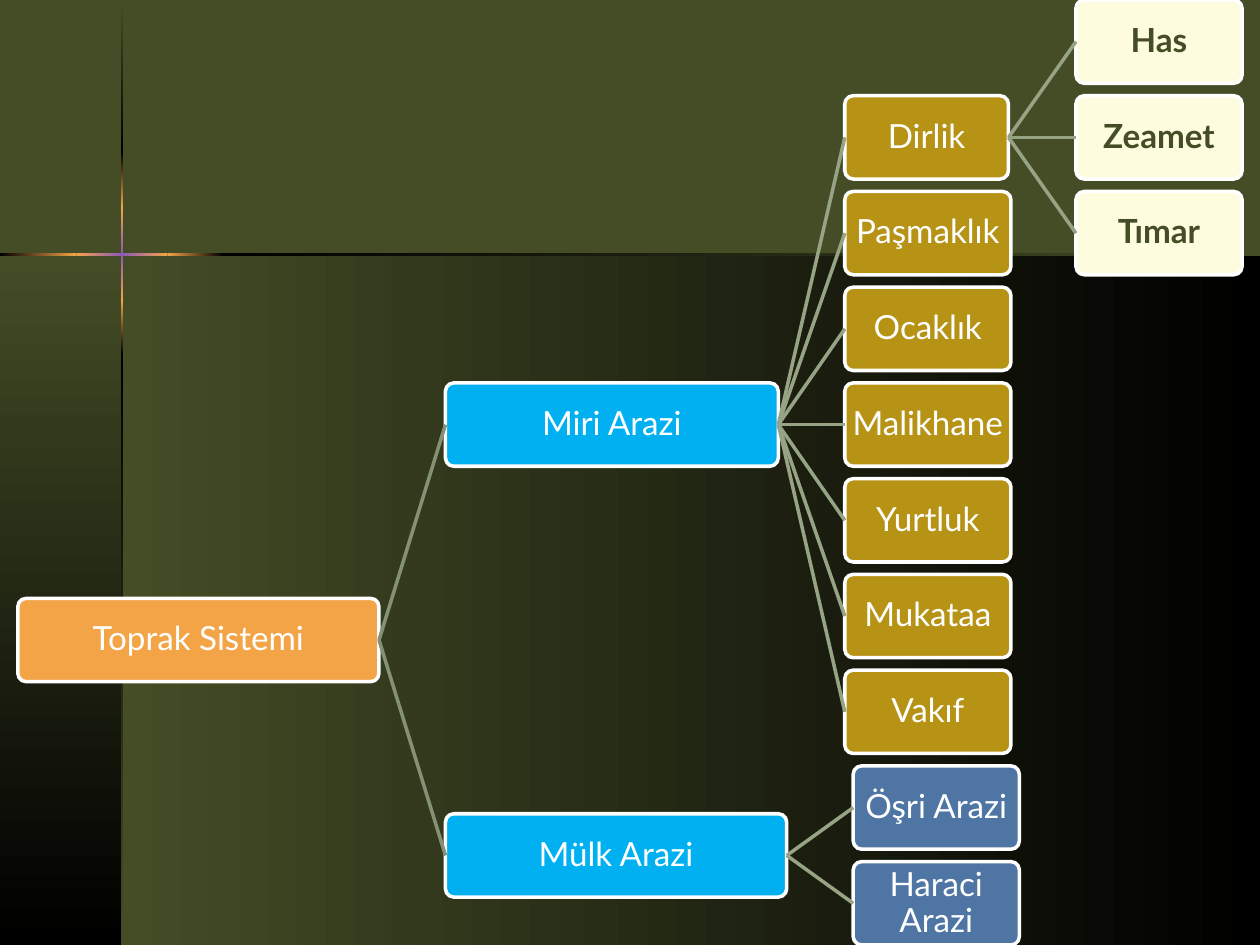
from copy import deepcopy

from lxml.etree import SubElement
from pptx import Presentation
from pptx.dml.color import RGBColor as Rgb
from pptx.enum.shapes import MSO_CONNECTOR as Link, MSO_SHAPE as Form
from pptx.enum.text import MSO_ANCHOR as Anchor, PP_ALIGN as Align
from pptx.oxml.ns import qn
from pptx.util import Cm, Pt

COLORS = {
    "olive": "444D26", "black": "000000", "white": "FFFFFF",
    "orange": "F3A447", "violet": "8E58B6", "blue": "00B0F0",
    "gold": "B79315", "cream": "FEFCDF", "steel": "4E75A3",
    "moss": "849175", "sage": "96A485",
}
WIDE, HIGH = 25.4, 19.05
PITCH, TALL = 1.93, 1.68  # row step and box height
SIDE = 3.35               # width of the small boxes
THIN = 0.05               # thickness of the glowing lines


def tint(name):
    return Rgb.from_string(COLORS[name])


def fade(slide, x, y, w, h, names, down=False):
    """Borderless rectangle with evenly spaced gradient stops."""
    rect = slide.shapes.add_shape(Form.RECTANGLE, Cm(x), Cm(y), Cm(w), Cm(h))
    rect.shadow.inherit = False
    rect.line.fill.background()
    rect.fill.gradient()
    rect.fill.gradient_angle = 270 if down else 0
    stops = rect._element.spPr.find(".//" + qn("a:gsLst"))
    for _ in names[2:]:
        stops.append(deepcopy(stops[0]))
    for i, (stop, name) in enumerate(zip(rect.fill.gradient_stops, names)):
        stop.position = i / (len(names) - 1)
        stop.color.rgb = tint(name)


def write(shape, text, size=19, color="white", bold=False, font="Lato"):
    frame = shape.text_frame
    frame.word_wrap = True
    frame.vertical_anchor = Anchor.MIDDLE
    frame.margin_left = frame.margin_right = Cm(0.08)
    frame.margin_top = frame.margin_bottom = Cm(0.08)
    para = frame.paragraphs[0]
    para.alignment = Align.CENTER
    para.line_spacing = 0.9
    run = para.add_run()
    run.text = text
    run.font.name, run.font.size, run.font.bold = font, Pt(size), bold
    run.font.color.rgb = tint(color)


def box(slide, text, x, row, w, fill, **style):
    node = slide.shapes.add_shape(
        Form.ROUNDED_RECTANGLE, Cm(x), Cm(row * PITCH), Cm(w), Cm(TALL))
    node.adjustments[0] = 0.1
    node.shadow.inherit = False
    node.fill.solid()
    node.fill.fore_color.rgb = tint(fill)
    node.line.color.rgb = tint("white")
    node.line.width = Pt(2)
    write(node, text, **style)
    return node


def join(slide, start, end, color="sage"):
    """Line from the right side of one box to the left side of another."""
    line = slide.shapes.add_connector(Link.STRAIGHT, 0, 0, 0, 0)
    line.begin_connect(start, 3)
    line.end_connect(end, 1)
    line.line.color.rgb = tint(color)
    line.line.width = Pt(2)
    SubElement(line._element.spPr, qn("a:effectLst"))


def stack(slide, root, names, x, row, fill, **style):
    """Column of small boxes, each joined to the root box."""
    nodes = []
    for i, name in enumerate(names):
        # The first gold box is slightly narrower than the others
        w = 3.3 if name == "Dirlik" else SIDE
        node = box(slide, name, x, row + i, w, fill, **style)
        join(slide, root, node)
        nodes.append(node)
    return nodes


def backdrop(slide):
    slide.background.fill.solid()
    slide.background.fill.fore_color.rgb = tint("olive")
    x, y = 2.46, 5.13
    fade(slide, x, y, WIDE - x, HIGH - y, ["olive", "black"])
    fade(slide, 0, y, x, HIGH - y, ["olive", "black"], down=True)

    # Glowing cross where the panels meet
    rise, glow = ["black", "orange"], ["orange", "violet", "orange"]
    drop = rise[::-1]
    tall = [(0.03, 3.07, ["olive", "black"]), (3.07, 4.19, rise),
            (4.19, 6.05, glow), (6.05, 7.16, drop),
            (7.16, HIGH, ["black", "olive"])]
    flat = [(0, 1.54, rise), (1.54, 3.38, glow), (3.38, 4.5, drop),
            (4.5, WIDE, ["black", "olive"])]
    for top, end, names in tall:
        fade(slide, x - THIN / 2, top, THIN, end - top, names, down=True)
    for left, end, names in flat:
        fade(slide, left, y - THIN / 2, end - left, THIN, names)


def tree(slide):
    # Root and its two branches
    root = box(slide, "Toprak Sistemi", 0.36, 6.25, 7.28, "orange")
    miri = box(slide, "Miri Arazi", 8.98, 4, 6.71, "blue")
    mulk = box(slide, "Mülk Arazi", 8.98, 8.5, 6.88, "blue")
    for branch in (miri, mulk):
        join(slide, root, branch, "moss")

    # Leaves
    lands = stack(slide, miri,
                  ["Dirlik", "Paşmaklık", "Ocaklık", "Malikhane",
                   "Yurtluk", "Mukataa", "Vakıf"], 17.03, 1, "gold")
    stack(slide, lands[0], ["Has", "Zeamet", "Tımar"], 21.69, 0, "cream",
          color="olive", bold=True)
    stack(slide, mulk, ["Öşri Arazi", "Haraci Arazi"], 17.2, 8, "steel")


def main():
    deck = Presentation()
    deck.slide_width, deck.slide_height = Cm(WIDE), Cm(HIGH)
    slide = deck.slides.add_slide(deck.slide_layouts[6])
    backdrop(slide)
    tree(slide)
    deck.save("out.pptx")


if __name__ == "__main__":
    main()
